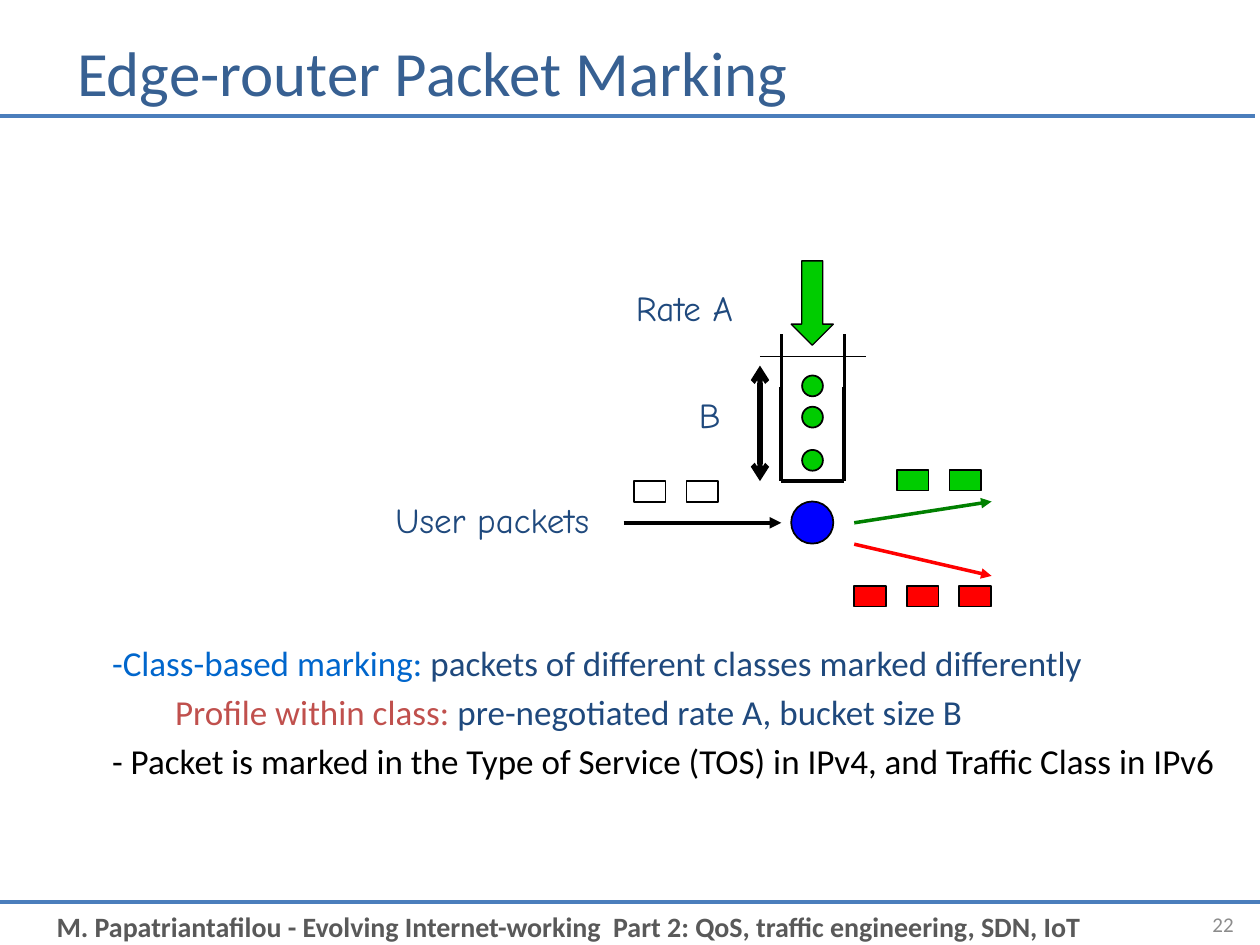
from lxml.etree import SubElement
from pptx import Presentation
from pptx.dml.color import RGBColor
from pptx.enum.shapes import MSO_CONNECTOR, MSO_SHAPE
from pptx.enum.text import MSO_ANCHOR, PP_ALIGN
from pptx.oxml.ns import qn
from pptx.util import Cm, Pt

BLACK, WHITE, GREEN, RED, BLUE = "000000", "FFFFFF", "00CC00", "FF0000", "0000FF"
NAVY, RULE = "1F497D", "4B7EBC"
PACKET_W, PACKET_H, PACKET_STEP = 0.64, 0.42, 1.06
TOKEN = 0.42
BUCKET_L, BUCKET_R, BUCKET_TOP, BUCKET_JOINT, BUCKET_BOTTOM = 15.75, 17.02, 6.73, 7.8, 9.7


def rgb(color):
    return RGBColor.from_string(color)


def add_run(p, text, size, color, font="Calibri", bold=False):
    r = p.add_run()
    r.text = text
    r.font.name, r.font.size, r.font.bold = font, Pt(size), bold
    r.font.color.rgb = rgb(color)


def add_text(s, box, text, size, color, font="Calibri", bold=False,
             align=PP_ALIGN.LEFT, anchor=MSO_ANCHOR.TOP):
    tf = s.shapes.add_textbox(*map(Cm, box)).text_frame
    tf.word_wrap = True
    tf.vertical_anchor = anchor
    p = tf.paragraphs[0]
    p.alignment = align
    add_run(p, text, size, color, font, bold)


def add_label(s, box, text):
    add_text(s, box, text, 20, NAVY, "Comic Neue")


def add_line(s, start, end, color=BLACK, width=2.25, head=None, tail=None):
    ends = map(Cm, (*start, *end))
    line = s.shapes.add_connector(MSO_CONNECTOR.STRAIGHT, *ends)
    line.line.color.rgb = rgb(color)
    line.line.width = Pt(width)
    ln = line.line._get_or_add_ln()
    for tag, kind in (("a:headEnd", head), ("a:tailEnd", tail)):
        if kind:
            SubElement(ln, qn(tag), type=kind)
    SubElement(line._element.spPr, qn("a:effectLst"))


def add_filled(s, kind, box, fill, width=1):
    sp = s.shapes.add_shape(kind, *map(Cm, box))
    sp.shadow.inherit = False
    sp.fill.solid()
    sp.fill.fore_color.rgb = rgb(fill)
    sp.line.color.rgb = rgb(BLACK)
    sp.line.width = Pt(width)


def add_packets(s, left, top, count, fill):
    for i in range(count):
        box = (left + i * PACKET_STEP, top, PACKET_W, PACKET_H)
        add_filled(s, MSO_SHAPE.RECTANGLE, box, fill)


def add_frame(s):
    """Title, the two rules, footer and page number."""
    add_line(s, (0, 18.19), (25.4, 18.19), RULE)
    add_line(s, (-0.1, 2.34), (25.3, 2.34), RULE)
    add_text(s, (0.89, 18.21, 23.5, 0.94),
             "M. Papatriantafilou - Evolving Internet-working  Part 2: "
             "QoS, traffic engineering, SDN, IoT", 16, "595959", bold=True)
    add_text(s, (23.09, 18.11, 2.03, 1.02), "22", 12, "8C8C8C",
             align=PP_ALIGN.RIGHT, anchor=MSO_ANCHOR.MIDDLE)
    title = s.shapes.title
    title.left, title.top, title.width, title.height = map(Cm, (1.3, 0.48, 21.59, 1.91))
    tf = title.text_frame
    tf.vertical_anchor = MSO_ANCHOR.MIDDLE
    p = tf.paragraphs[0]
    p.alignment = PP_ALIGN.LEFT
    add_run(p, "Edge-router Packet Marking", 36, "376092")


def add_notes_on_marking(s):
    paragraphs = [
        (0, [("-Class-based marking:", "0066CC"),
             (" packets of different classes marked differently", NAVY)]),
        (1, [("Profile within class: ", "C0504D"),
             ("pre-negotiated rate A, bucket size B", NAVY)]),
        (0, [("- Packet is marked in the Type of Service (TOS) in IPv4, "
              "and Traffic Class in IPv6", BLACK)]),
    ]
    tf = s.shapes.add_textbox(*map(Cm, (2.01, 12.8, 22.86, 5.08))).text_frame
    tf.word_wrap = True
    for i, (level, runs) in enumerate(paragraphs):
        p = tf.add_paragraph() if i else tf.paragraphs[0]
        p.level = level
        p.space_before = Pt(4 if i else 0)
        for text, color in runs:
            add_run(p, text, 20, color)


def add_bucket(s):
    for x in (BUCKET_L, BUCKET_R):
        add_line(s, (x, BUCKET_JOINT), (x, BUCKET_BOTTOM))
        add_line(s, (x, BUCKET_JOINT), (x, BUCKET_TOP), width=2)
    add_line(s, (BUCKET_L, BUCKET_BOTTOM), (BUCKET_R, BUCKET_BOTTOM))
    for top in (7.57, 8.2, 9.07):
        add_filled(s, MSO_SHAPE.OVAL, (16.17, top, TOKEN, TOKEN), GREEN)
    add_filled(s, MSO_SHAPE.DOWN_ARROW, (15.95, 5.26, 0.85, 1.7), GREEN, 0.75)
    add_line(s, (15.32, 7.19), (17.45, 7.19), width=0.75)
    add_line(s, (15.32, 7.37), (15.32, BUCKET_BOTTOM), width=3, head="arrow", tail="arrow")
    add_label(s, (12.57, 5.66, 3.18, 1.09), "Rate A")
    add_label(s, (13.84, 7.8, 0.97, 1.09), "B")


def add_flows(s):
    """Incoming packets, the marker and the two marked streams."""
    add_label(s, (7.72, 9.93, 5.92, 1.09), "User packets")
    add_filled(s, MSO_SHAPE.OVAL, (15.95, 10.11, 0.85, 0.85), BLUE)
    add_line(s, (12.57, 10.54), (15.75, 10.54), tail="triangle")
    add_line(s, (17.22, 10.54), (19.99, 10.11), "008000", 2, tail="triangle")
    add_line(s, (17.22, 10.97), (19.99, 11.61), RED, 2, tail="triangle")
    add_packets(s, 12.78, 9.7, 2, WHITE)
    add_packets(s, 18.08, 9.47, 2, GREEN)
    add_packets(s, 17.22, 11.81, 3, RED)


def main():
    prs = Presentation()
    prs.slide_width, prs.slide_height = Cm(25.4), Cm(19.05)
    s = prs.slides.add_slide(prs.slide_layouts[5])
    add_frame(s)
    add_notes_on_marking(s)
    add_bucket(s)
    add_flows(s)
    prs.save("out.pptx")


if __name__ == "__main__":
    main()
